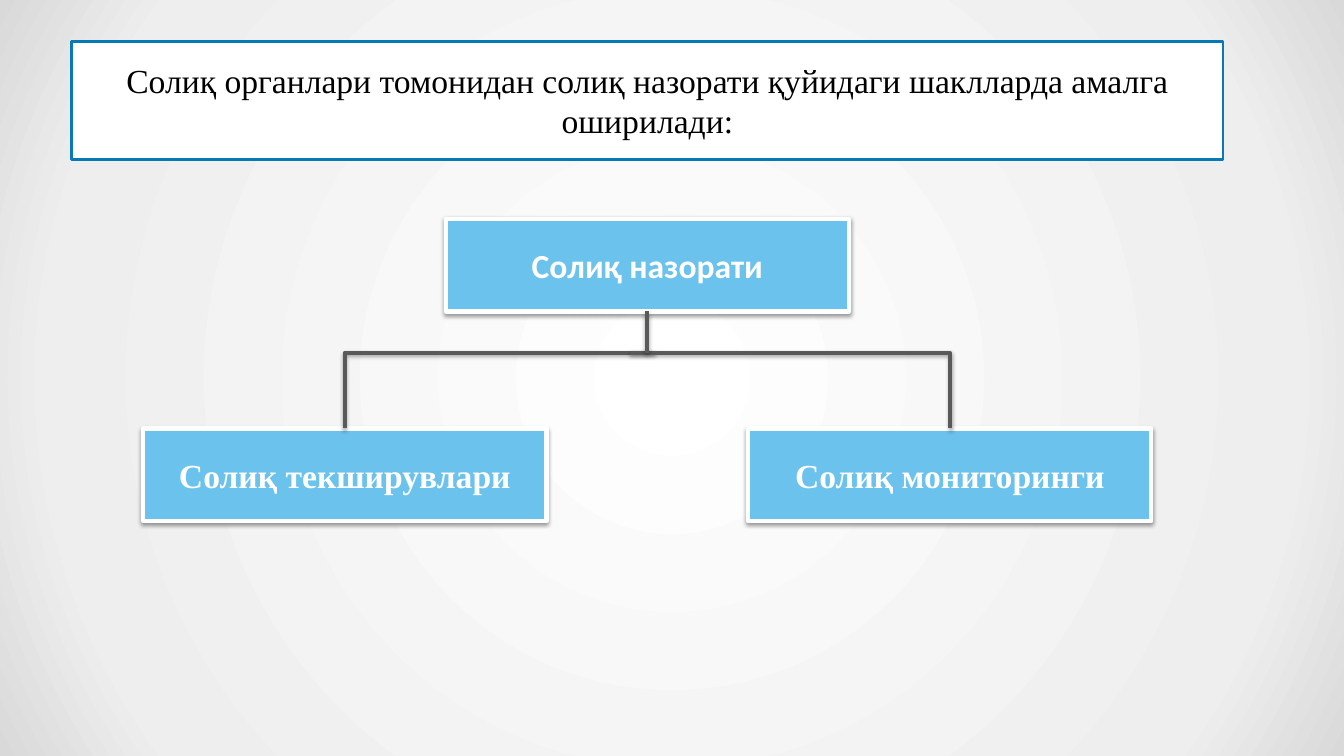
from lxml.etree import SubElement
from pptx import Presentation
from pptx.dml.color import RGBColor
from pptx.enum.shapes import MSO_CONNECTOR, MSO_SHAPE
from pptx.enum.text import MSO_ANCHOR, PP_ALIGN
from pptx.oxml.ns import qn
from pptx.util import Inches, Pt

TOP, LEFT, BOTTOM, RIGHT = range(4)


def color(value):
    return RGBColor.from_string(value)


class Diagram:
    SERIF, SANS = "Times New Roman", "Calibri"
    BLUE, BORDER, GRAY = "6BC2ED", "0779B7", "595959"
    WHITE, BLACK = "FFFFFF", "000000"

    def __init__(self, slide):
        self.s = slide

    def background(self, stops):
        """Fill the slide with a gradient spreading from its centre."""
        fill = self.s.background.fill
        fill.gradient()
        grad = self.s.background._cSld.find(".//" + qn("a:gradFill"))
        for child in list(grad):
            grad.remove(child)
        gs_list = SubElement(grad, qn("a:gsLst"))
        for position, value in stops:
            gs = SubElement(gs_list, qn("a:gs"), pos=str(position * 1000))
            SubElement(gs, qn("a:srgbClr"), val=value)
        path = SubElement(grad, qn("a:path"), {"path": "circle"})
        SubElement(path, qn("a:fillToRect"), l="50000", t="50000", r="50000", b="50000")

    def shadow(self, sp, alpha, distance):
        props = sp._element.spPr
        effects = props.find(qn("a:effectLst"))
        if effects is None:
            effects = SubElement(props, qn("a:effectLst"))
        outer = SubElement(effects, qn("a:outerShdw"), blurRad=str(Pt(3.1)),
                           dist=str(Pt(distance)), dir="5400000", rotWithShape="0")
        clr = SubElement(outer, qn("a:srgbClr"), val=self.BLACK)
        SubElement(clr, qn("a:alpha"), val=str(alpha * 1000))

    def box(self, text, x, y, w, h, font, fill, line, width, ink, bold=False):
        sp = self.s.shapes.add_shape(MSO_SHAPE.RECTANGLE, Inches(x), Inches(y),
                                     Inches(w), Inches(h))
        sp.shadow.inherit = False
        sp.fill.solid()
        sp.fill.fore_color.rgb = color(fill)
        sp.line.color.rgb = color(line)
        sp.line.width = Pt(width)
        tf = sp.text_frame
        tf.word_wrap = True
        tf.vertical_anchor = MSO_ANCHOR.MIDDLE
        tf.text = text
        p = tf.paragraphs[0]
        p.alignment = PP_ALIGN.CENTER
        r = p.runs[0]
        r.font.name = font
        r.font.size = Pt(24)
        r.font.bold = bold
        r.font.color.rgb = color(ink)
        return sp

    def node(self, text, x, y, font):
        sp = self.box(text, x, y, 4, 0.92, font, self.BLUE, self.WHITE, 3,
                      self.WHITE, bold=True)
        self.shadow(sp, 38, 1.6)
        return sp

    def connector(self, kind, start, end):
        cxn = self.s.shapes.add_connector(kind, *map(Inches, start + end))
        cxn.line.color.rgb = color(self.GRAY)
        cxn.line.width = Pt(3)
        self.shadow(cxn, 35, 1.8)
        return cxn

    def branch(self, start, end, child):
        """Run sideways from start, then down to the top of the child."""
        cxn = self.connector(MSO_CONNECTOR.ELBOW, start, end)
        cxn._element.spPr.find(qn("a:prstGeom")).set("prst", "bentConnector2")
        cxn.end_connect(child, TOP)

    def stem(self, start, end, parent):
        cxn = self.connector(MSO_CONNECTOR.STRAIGHT, start, end)
        cxn.end_connect(parent, BOTTOM)


def main():
    prs = Presentation()
    prs.slide_width, prs.slide_height = Inches(13.33), Inches(7.5)
    d = Diagram(prs.slides.add_slide(prs.slide_layouts[6]))
    d.background([(0, "FFFFFF"), (81, "EEEEEE"), (100, "D9D9D9")])

    # Hierarchy boxes
    root = d.node("Солиқ назорати", 4.42, 2.17, d.SANS)
    checks = d.node("Солиқ текширувлари", 1.42, 4.25, d.SERIF)
    monitoring = d.node("Солиқ мониторинги", 7.42, 4.25, d.SERIF)

    # Connecting lines, the branches overlapping at the stem
    d.branch((6.5, 3.5), (3.42, 4.25), checks)
    d.branch((6.25, 3.5), (9.42, 4.25), monitoring)
    d.stem((6.42, 3.5), (6.42, 3.09), root)

    # Heading
    d.box("Солиқ органлари томонидан солиқ назорати қуйидаги шаклларда амалга оширилади:",
          0.71, 0.41, 11.42, 1.17, d.SERIF, d.WHITE, d.BORDER, 2, d.BLACK)

    prs.save("out.pptx")


if __name__ == "__main__":
    main()
